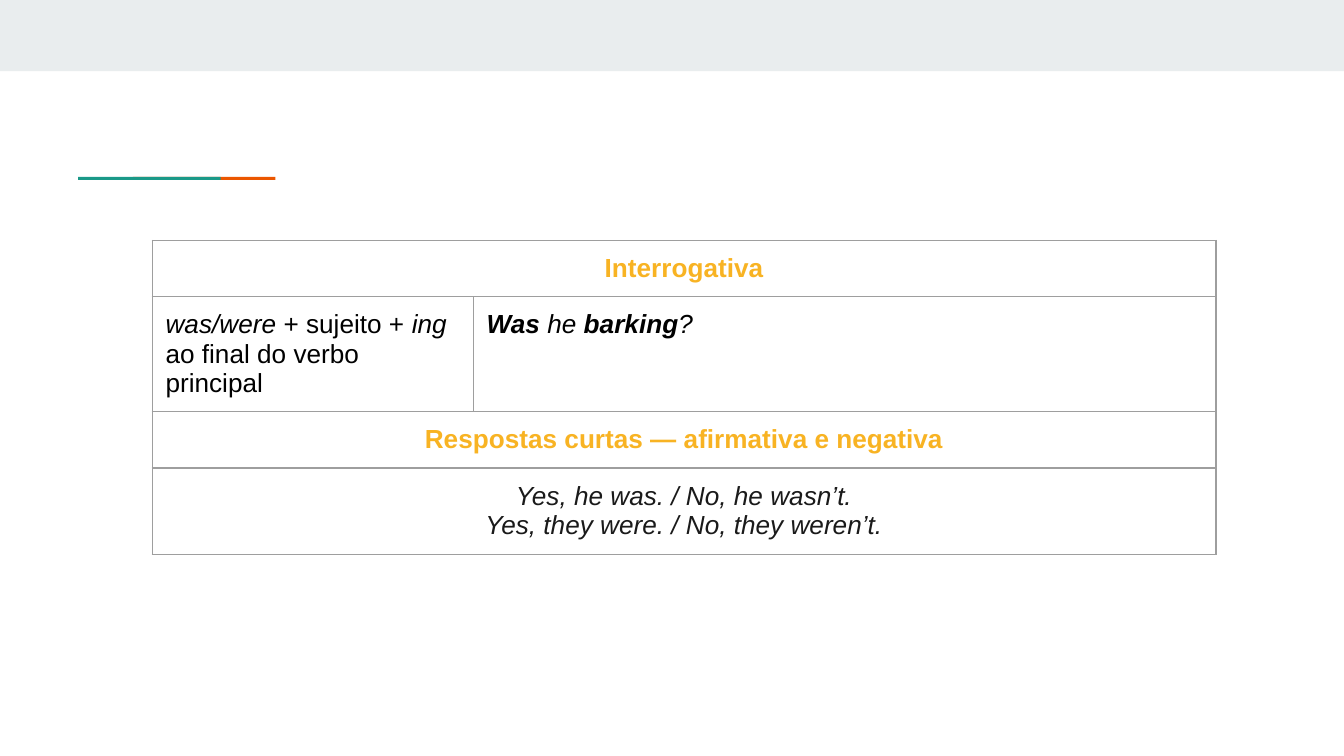
"""Build the slide with the table of interrogative forms and short answers."""
import pptx
import pptx.dml.color
import pptx.enum.shapes
import pptx.enum.text
import pptx.oxml
import pptx.oxml.ns
import pptx.util

Pt = pptx.util.Pt
RGBColor = pptx.dml.color.RGBColor
PALE_GREY = RGBColor(0xE9, 0xED, 0xEE)
ORANGE = RGBColor(0xEB, 0x56, 0x00)
TEAL = RGBColor(0x1A, 0x99, 0x88)
YELLOW = RGBColor(0xF8, 0xB3, 0x23)
BLACK = RGBColor(0x00, 0x00, 0x00)
DARK_GREY = RGBColor(0x1A, 0x1A, 0x1A)
BORDER_GREY = RGBColor(0x9E, 0x9E, 0x9E)


def add_borders(cell):
    """Draw a thin line on all four sides of a cell."""
    properties = cell._tc.get_or_add_tcPr()
    for position, side in enumerate(("lnL", "lnR", "lnT", "lnB")):
        line = pptx.oxml.parse_xml(
            f'<a:{side} {pptx.oxml.ns.nsdecls("a")} w="{Pt(0.75)}"><a:solidFill>'
            f'<a:srgbClr val="{BORDER_GREY}"/></a:solidFill></a:{side}>'
        )
        properties.insert(position, line)


presentation = pptx.Presentation()
presentation.slide_width = Pt(720)
presentation.slide_height = Pt(405)
slide = presentation.slides.add_slide(presentation.slide_layouts[6])

bars = [
    (0, 0, 720, 38.2, PALE_GREY),
    (71.2, 94.8, 76.4, 1.6, ORANGE),
    (41.8, 94.8, 76.4, 1.6, TEAL),
]
for left, top, width, height, color in bars:
    bar = slide.shapes.add_shape(
        pptx.enum.shapes.MSO_SHAPE.RECTANGLE, Pt(left), Pt(top), Pt(width), Pt(height)
    )
    bar.shadow.inherit = False
    bar.fill.solid()
    bar.fill.fore_color.rgb = color
    bar.line.fill.background()

column_widths = [172, 398]
row_heights = [30, 61.6, 30, 46.2]
table = slide.shapes.add_table(
    len(row_heights), len(column_widths), Pt(81.5), Pt(128.8),
    Pt(sum(column_widths)), Pt(sum(row_heights)),
).table
table.first_row = False
table.horz_banding = False
for column, width in zip(table.columns, column_widths):
    column.width = Pt(width)
for row, height in zip(table.rows, row_heights):
    row.height = Pt(height)
for row_index in (0, 2, 3):
    table.cell(row_index, 0).merge(table.cell(row_index, 1))

for cell in table.iter_cells():
    cell.fill.background()
    cell.margin_left = cell.margin_right = Pt(7.2)
    cell.margin_top = cell.margin_bottom = Pt(7.2)
    add_borders(cell)

# Each run is a text followed by its bold and italic settings.
contents = [
    (0, 0, YELLOW, [[("Interrogativa", True, False)]]),
    (1, 0, BLACK, [[
        ("was/were ", False, True),
        ("+ sujeito + ", False, False),
        ("ing ", False, True),
        ("ao final do verbo principal", False, False),
    ]]),
    (1, 1, BLACK, [[
        ("Was ", True, True),
        ("he ", False, True),
        ("barking", True, True),
        ("?", False, True),
    ]]),
    (2, 0, YELLOW, [[("Respostas curtas — afirmativa e negativa", True, False)]]),
    (3, 0, DARK_GREY, [
        [("Yes, he was. / No, he wasn’t.", False, True)],
        [("Yes, they were. / No, they weren’t.", False, True)],
    ]),
]
for row_index, column_index, color, paragraphs in contents:
    cell = table.cell(row_index, column_index)
    for index, runs in enumerate(paragraphs):
        text_frame = cell.text_frame
        paragraph = text_frame.add_paragraph() if index else text_frame.paragraphs[0]
        if cell.is_merge_origin:
            paragraph.alignment = pptx.enum.text.PP_ALIGN.CENTER
        paragraph.font.name = "Arial"
        paragraph.font.size = Pt(14)
        paragraph.font.color.rgb = color
        for text, bold, italic in runs:
            run = paragraph.add_run()
            run.text = text
            run.font.bold = bold
            run.font.italic = italic

presentation.save("out.pptx")
